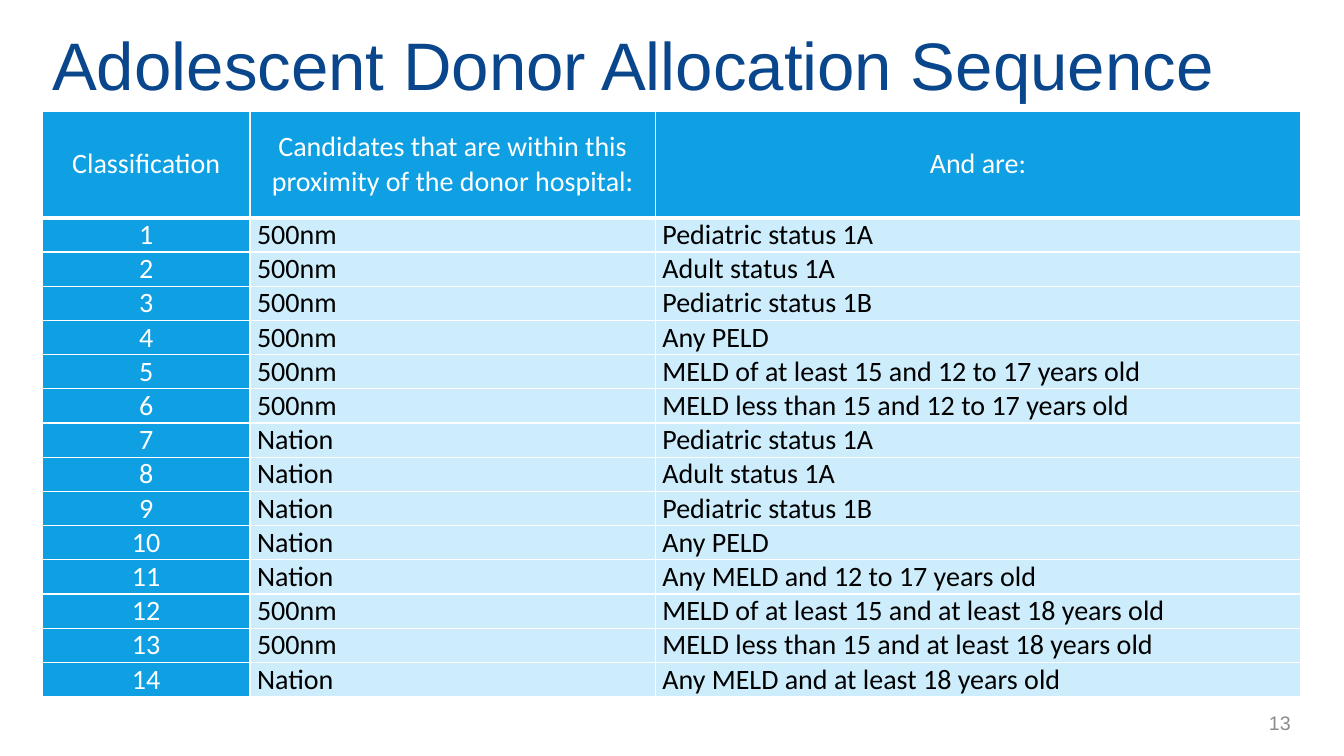
from dataclasses import dataclass

from lxml.etree import Element, SubElement
from pptx import Presentation
from pptx.dml.color import RGBColor as Rgb
from pptx.enum.text import MSO_ANCHOR as Anchor, PP_ALIGN as Align
from pptx.oxml.ns import qn
from pptx.util import Inches, Pt


@dataclass(frozen=True)
class Theme:
    """Colours, fonts and type sizes of the slide."""
    navy: str = "0A468C"
    blue: str = "0FA0E4"
    pale: str = "CDEDFC"
    white: str = "FFFFFF"
    black: str = "000000"
    grey: str = "8C8C8C"
    head: str = "Arial"
    body: str = "Calibri"
    title: int = 48
    cell: int = 20
    page: int = 14


THEME = Theme()
WIDE, HIGH = Inches(13.33), Inches(7.5)
COLS = (15.45, 30.16, 48.01)
HEAD, ROW = 14.13, 4.53
HEADS = (
    "Classification",
    "Candidates that are within this proximity of the donor hospital:",
    "And are:",
)
NEAR, FAR = "500nm", "Nation"
RANKS = (
    (NEAR, "Pediatric status 1A"),
    (NEAR, "Adult status 1A"),
    (NEAR, "Pediatric status 1B"),
    (NEAR, "Any PELD"),
    (NEAR, "MELD of at least 15 and 12 to 17 years old"),
    (NEAR, "MELD less than 15 and 12 to 17 years old"),
    (FAR, "Pediatric status 1A"),
    (FAR, "Adult status 1A"),
    (FAR, "Pediatric status 1B"),
    (FAR, "Any PELD"),
    (FAR, "Any MELD and 12 to 17 years old"),
    (NEAR, "MELD of at least 15 and at least 18 years old"),
    (NEAR, "MELD less than 15 and at least 18 years old"),
    (FAR, "Any MELD and at least 18 years old"),
)


def across(share):
    """Turn a percentage of the slide's width into a length."""
    return int(WIDE * share / 100)


def down(share):
    """Turn a percentage of the slide's height into a length."""
    return int(HIGH * share / 100)


def style(para, text, face, size, tint, align):
    """Fill a paragraph and set its font and alignment."""
    para.text = text
    para.alignment = align
    font = para.font
    font.name, font.size = face, Pt(size)
    font.color.rgb = Rgb.from_string(tint)


def add_label(slide, area, text, size, tint, align):
    """Add a one-line text box at a left, top, width, height in percent."""
    left, top, wide, high = area
    box = slide.shapes.add_textbox(across(left), down(top), across(wide), down(high))
    frame = box.text_frame
    frame.word_wrap = True
    frame.vertical_anchor = Anchor.MIDDLE
    style(frame.paragraphs[0], text, THEME.head, size, tint, align)


def add_edges(cell, base):
    """Draw white cell borders with the given bottom width in points."""
    props = cell._tc.get_or_add_tcPr()
    edges = (("L", 1), ("R", 1), ("T", 1), ("B", base))
    for spot, (side, width) in enumerate(edges):
        line = Element(qn(f"a:ln{side}"), w=str(Pt(width)))
        fill = SubElement(line, qn("a:solidFill"))
        SubElement(fill, qn("a:srgbClr"), val=THEME.white)
        props.insert(spot, line)


def fill_cell(cell, text, strong, base):
    """Write one cell, centred white on blue when strong."""
    cell.margin_left = cell.margin_right = Inches(0.07)
    cell.margin_top = cell.margin_bottom = 0
    cell.vertical_anchor = Anchor.MIDDLE
    cell.fill.solid()
    cell.fill.fore_color.rgb = Rgb.from_string(THEME.blue if strong else THEME.pale)
    tint = THEME.white if strong else THEME.black
    align = Align.CENTER if strong else Align.LEFT
    style(cell.text_frame.paragraphs[0], text, THEME.body, THEME.cell, tint, align)
    add_edges(cell, base)


def add_ranks(slide, left, top):
    """Add the table of allocation classes."""
    rows = [HEADS] + [(str(rank), *pair) for rank, pair in enumerate(RANKS, 1)]
    high = HEAD + ROW * len(RANKS)
    table = slide.shapes.add_table(
        len(rows), len(COLS), across(left), down(top), across(sum(COLS)), down(high)
    ).table
    table.horz_banding = False
    table.first_col = True
    for col, share in zip(table.columns, COLS):
        col.width = across(share)
    for r, texts in enumerate(rows):
        table.rows[r].height = down(ROW if r else HEAD)
        for c, text in enumerate(texts):
            fill_cell(table.cell(r, c), text, r == 0 or c == 0, 1 if r else 3)


def main():
    """Build and save the slide."""
    deck = Presentation()
    deck.slide_width, deck.slide_height = WIDE, HIGH
    slide = deck.slides.add_slide(deck.slide_layouts[6])
    add_label(slide, (3.15, 2.27, 95.57, 12.4), "Adolescent Donor Allocation Sequence",
              THEME.title, THEME.navy, Align.LEFT)
    add_label(slide, (79.82, 92.93, 16.95, 5.33), "13",
              THEME.page, THEME.grey, Align.RIGHT)
    add_ranks(slide, 3.15, 14.67)
    deck.save("out.pptx")


if __name__ == "__main__":
    main()
